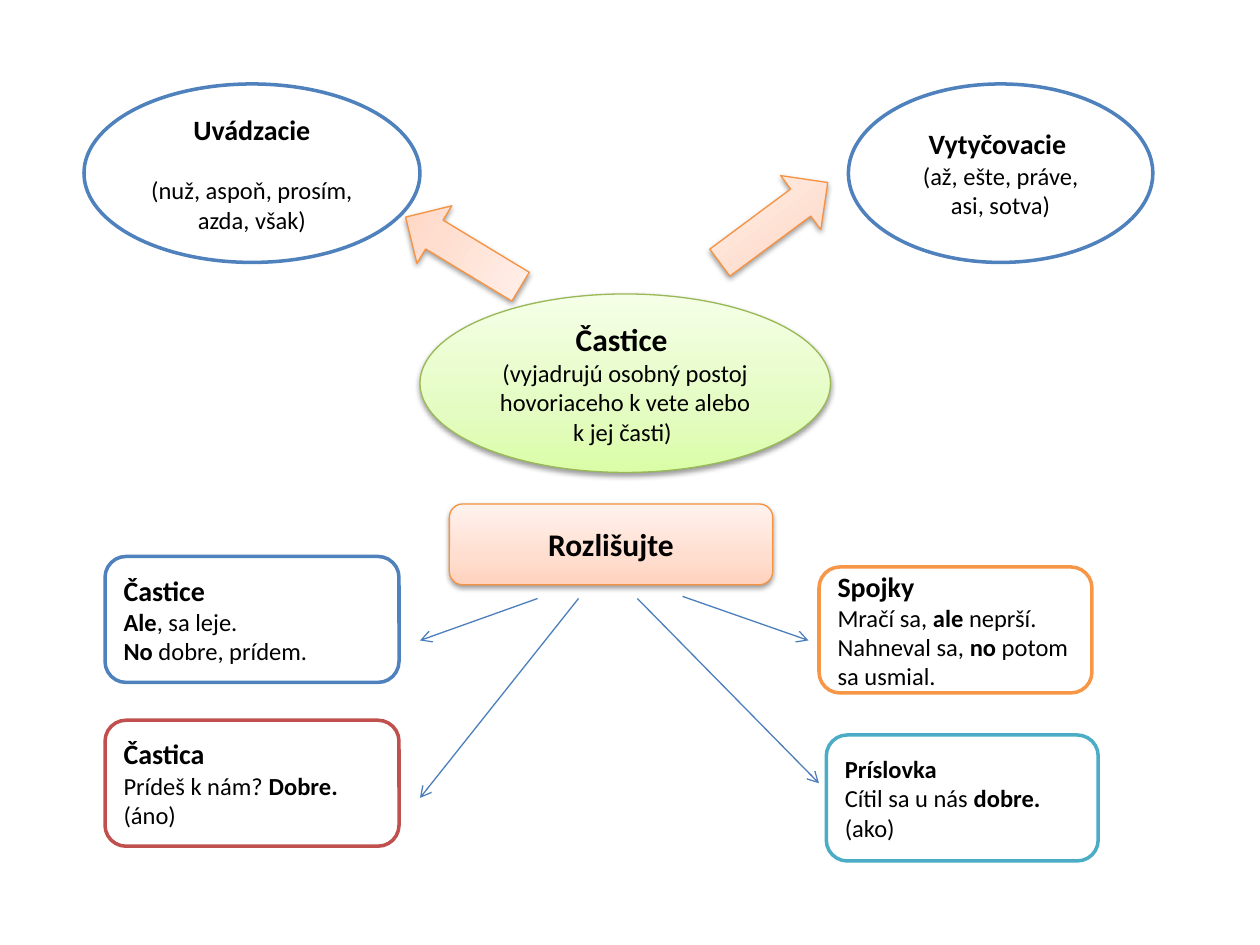
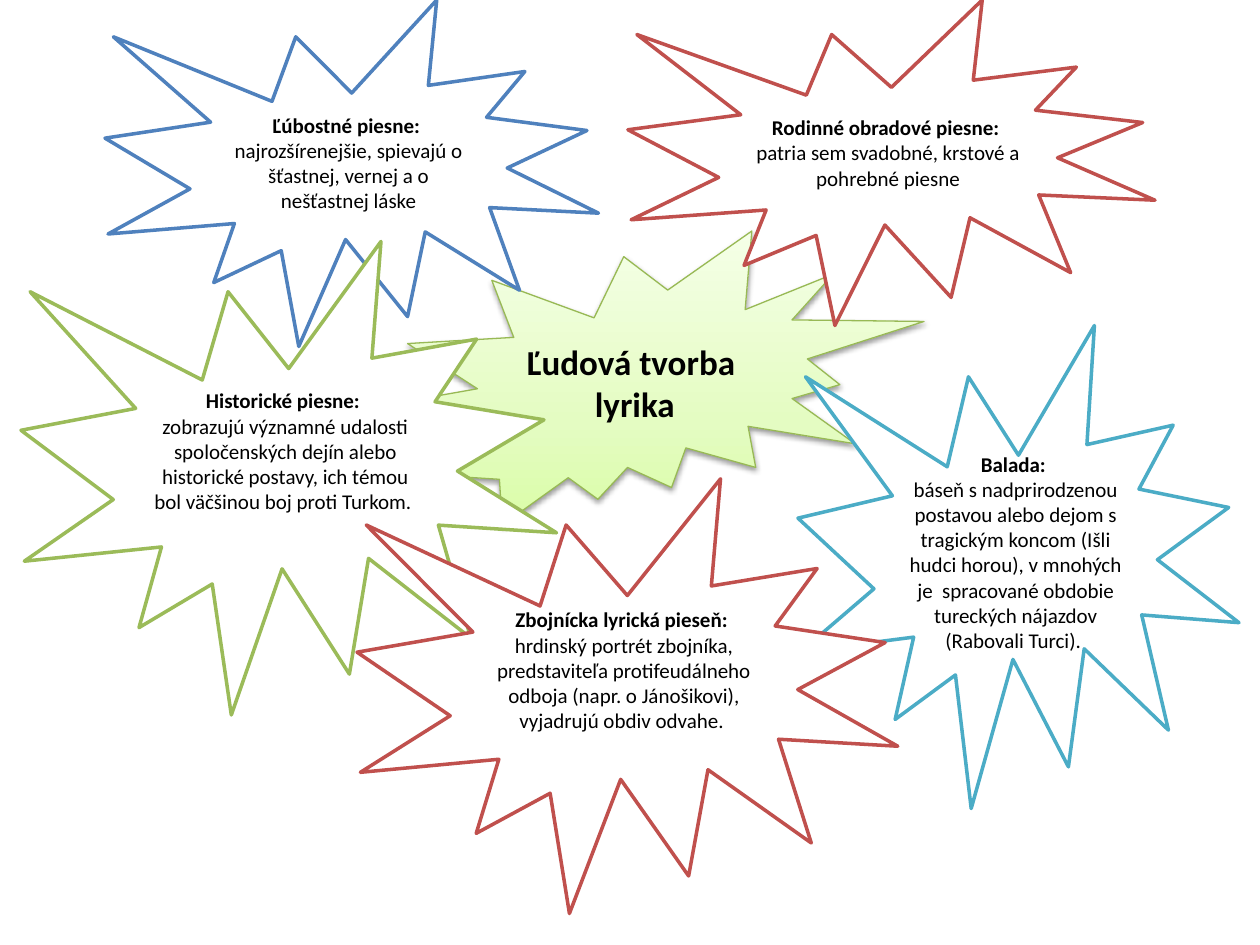
from copy import deepcopy

from lxml import etree
from pptx import Presentation
from pptx.dml.color import RGBColor
from pptx.enum.shapes import MSO_CONNECTOR, MSO_SHAPE
from pptx.enum.text import MSO_ANCHOR, PP_ALIGN
from pptx.oxml import parse_xml
from pptx.oxml.ns import nsdecls, qn
from pptx.util import Inches, Pt

ELLIPSE = MSO_SHAPE.OVAL
BOX = MSO_SHAPE.ROUNDED_RECTANGLE
STAR = MSO_SHAPE.EXPLOSION1
BIG_STAR = MSO_SHAPE.EXPLOSION2
RIGHT_ARROW = MSO_SHAPE.RIGHT_ARROW
DOWN_ARROW = MSO_SHAPE.DOWN_ARROW
STRAIGHT = MSO_CONNECTOR.STRAIGHT
CENTER, LEFT = PP_ALIGN.CENTER, PP_ALIGN.LEFT
MIDDLE = MSO_ANCHOR.MIDDLE

FONT = "Calibri"
WHITE, BLACK = "FFFFFF", "000000"
BLUE, RED, GREEN = "4F81BD", "C0504D", "9BBB59"
ORANGE, TEAL, POINTER = "F79646", "4BACC6", "4B7EBC"
LIME_GLOW = ("98B955", ("DAFDA7", "E4FCC2", "F5FFE7"))
PEACH_GLOW = ("F69240", ("FFD2BD", "FFDED0", "FFF2ED"))
GLOW_STOPS = (0, 0.35, 1)
SHADOW = (
    f'<a:outerShdw {nsdecls("a")} blurRad="40000" dist="20000" dir="5400000" rotWithShape="0">'
    f'<a:srgbClr val="{BLACK}"><a:alpha val="38000"/></a:srgbClr></a:outerShdw>'
)

prs = Presentation()
prs.slide_width, prs.slide_height = Inches(10), Inches(7.5)
CELL = prs.slide_width / 120
BLANK = prs.slide_layouts[6]


def rgb(hex_color):
    return RGBColor.from_string(hex_color)


def add_figure(slide, preset, cells, style, paragraphs=(), align=CENTER):
    figure = slide.shapes.add_shape(preset, *(round(c * CELL) for c in cells))
    figure.shadow.inherit = False
    if isinstance(style, tuple):
        outline, glow = style
        figure.fill.gradient()
        figure.fill.gradient_angle = 90
        stops = figure._element.spPr.find(".//" + qn("a:gsLst"))
        stops.append(deepcopy(stops[0]))
        for stop, color, position in zip(figure.fill.gradient_stops, glow, GLOW_STOPS):
            stop.color.rgb = rgb(color)
            stop.position = position
        figure._element.spPr.find(qn("a:effectLst")).append(parse_xml(SHADOW))
        figure.line.width = Pt(0.75)
    else:
        outline = style
        figure.fill.solid()
        figure.fill.fore_color.rgb = rgb(WHITE)
        figure.line.width = Pt(2)
    figure.line.color.rgb = rgb(outline)

    frame = figure.text_frame
    frame.word_wrap = True
    frame.vertical_anchor = MIDDLE
    for number, (size, marked_text) in enumerate(paragraphs):
        paragraph = frame.add_paragraph() if number else frame.paragraphs[0]
        paragraph.alignment = align
        paragraph.text = marked_text.replace("*", "")
        if "*" in marked_text:
            paragraph.clear()
            for part, piece in enumerate(marked_text.split("*")):
                for row, words in enumerate(piece.split("\v")):
                    if row:
                        paragraph.add_line_break()
                    if words:
                        run = paragraph.add_run()
                        run.text = words
                        run.font.bold = part % 2 == 1
        paragraph.font.size = Pt(size)
        for run in paragraph.runs:
            run.font.name = FONT
            run.font.size = Pt(size)
            run.font.color.rgb = rgb(BLACK)
    return figure


particles = prs.slides.add_slide(BLANK)
add_figure(particles, ELLIPSE, (40, 28, 39.1, 17), LIME_GLOW, [
    (18, "*Častice *"),
    (14, "(vyjadrujú osobný postoj hovoriaceho k vete alebo k jej časti) "),
])
introducing = add_figure(particles, ELLIPSE, (8, 8, 32, 17), BLUE, [
    (16, "*Uvádzacie*"),
    (14, "(nuž, aspoň, prosím, azda, však)"),
])
introducing.text_frame.paragraphs[1].space_before = Pt(17)
add_figure(particles, ELLIPSE, (80.8, 8, 29, 17), BLUE, [
    (16, "*Vytyčovacie *"),
    (14, "(až, ešte, práve, asi, sotva)"),
])

for preset, cells, turn in (
    (RIGHT_ARROW, (67.3, 18, 12.8, 6.4), 323.4),
    (DOWN_ARROW, (40.9, 17.6, 6.4, 12.8), 121.2),
):
    add_figure(particles, preset, cells, PEACH_GLOW).rotation = turn

add_figure(particles, BOX, (42.8, 48, 30.8, 7.7), PEACH_GLOW, [(18, "*Rozlišujte*")])

examples = (
    ((10, 53, 28, 12), BLUE,
     [(16, "*Častice*"), (14, "*Ale*, sa leje."), (14, "*No* dobre, prídem.")]),
    ((10, 68.6, 28, 12), RED,
     [(16, "*Častica*"), (14, "Prídeš k nám? *Dobre. *(áno)")]),
    ((78, 54, 26, 12), ORANGE,
     [(16, "*Spojky*"), (14, "Mračí sa, *ale *neprší."),
      (14, "Nahneval sa, *no* potom sa usmial.")]),
    ((78.7, 70, 25.9, 12), TEAL,
     [(14, "*Príslovka*"), (14, "Cítil sa u nás *dobre.* (ako)")]),
)
for cells, outline, paragraphs in examples:
    add_figure(particles, BOX, cells, outline, paragraphs, LEFT)

for ends in (
    (65, 56.8, 77, 61),
    (60.7, 57, 78, 74.6),
    (55.1, 57, 40, 76),
    (51.2, 57, 40, 61),
):
    pointer = particles.shapes.add_connector(STRAIGHT, *(round(c * CELL) for c in ends))
    pointer.line.color.rgb = rgb(POINTER)
    pointer.line.width = Pt(0.75)
    etree.SubElement(pointer.line._get_or_add_ln(), qn("a:tailEnd"), type="arrow")
    etree.SubElement(pointer._element.spPr, qn("a:effectLst"))

folk_lyrics = prs.slides.add_slide(BLANK)
add_figure(folk_lyrics, BIG_STAR, (36, 22, 52, 28), LIME_GLOW,
           [(20, "*Ľudová tvorba  lyrika*")])

RAISED, CENTERED = Inches(0.25), Inches(0.05)
genres = (
    ((10, 0, 47, 33), BLUE, CENTERED, "Ľúbostné piesne: ",
     "najrozšírenejšie, spievajú o šťastnej, vernej a o nešťastnej láske"),
    ((59.8, 0, 50.2, 31), RED, CENTERED, "Rodinné obradové piesne: ",
     "patria sem svadobné, krstové a pohrebné piesne"),
    ((2, 23, 51, 45.1), GREEN, RAISED, "Historické piesne: ",
     "zobrazujú významné udalosti spoločenských dejín alebo historické postavy, "
     "ich témou bol väčšinou boj proti Turkom. "),
    ((76, 31, 42, 46), TEAL, CENTERED, "Balada: ",
     "báseň s nadprirodzenou postavou alebo dejom s tragickým koncom (Išli hudci horou), "
     "v mnohých je  spracované obdobie tureckých nájazdov (Rabovali Turci). "),
    ((34, 45.6, 51.5, 41.4), RED, RAISED, "Zbojnícka lyrická pieseň: ",
     "hrdinský portrét zbojníka, predstaviteľa protifeudálneho odboja "
     "(napr. o Jánošikovi), vyjadrujú obdiv odvahe. "),
)
for cells, outline, bottom_margin, genre, description in genres:
    star = add_figure(folk_lyrics, STAR, cells, outline, [(12, f"*{genre}*\v{description}")])
    star.text_frame.margin_bottom = bottom_margin

prs.save("out.pptx")
